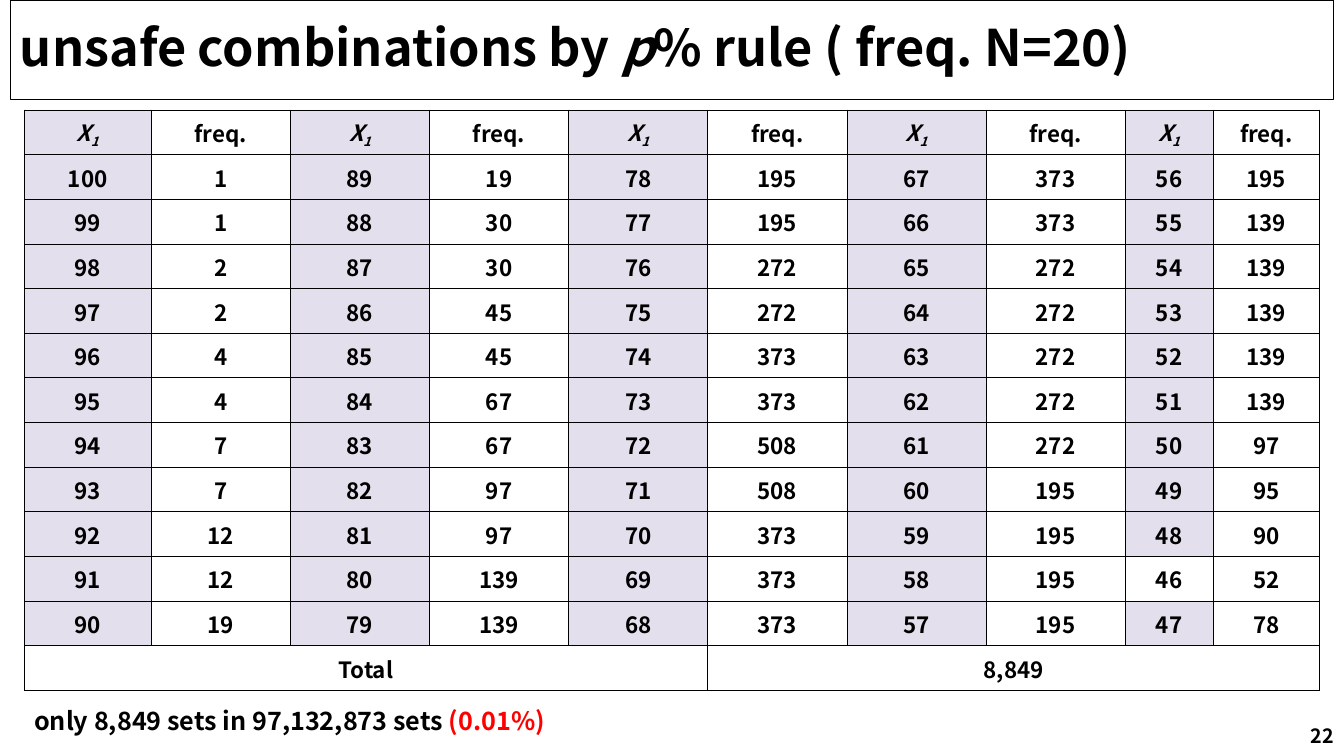
"""Build the slide listing unsafe combinations by the p% rule for N=20."""
from lxml.etree import SubElement
from pptx import Presentation
from pptx.dml.color import RGBColor
from pptx.enum.shapes import MSO_SHAPE
from pptx.enum.text import MSO_ANCHOR, PP_ALIGN
from pptx.oxml.ns import qn
from pptx.util import Inches, Pt

FONT = "Noto Sans CJK JP"
BLACK = RGBColor(0x00, 0x00, 0x00)
RED = RGBColor(0xFF, 0x00, 0x00)
WHITE = RGBColor(0xFF, 0xFF, 0xFF)
LILAC = RGBColor(0xE4, 0xDF, 0xEC)

TITLE = [("unsafe combinations by ", {}), ("p", {"italic": True}), ("% rule ( freq. N=20)", {})]
X1_HEADING = [("X", {"italic": True}), ("1", {"italic": True, "baseline": -25})]
FREQ_HEADING = [("freq.", {})]
FREQ_BY_X1 = [
    (range(100, 89, -1), [1, 1, 2, 2, 4, 4, 7, 7, 12, 12, 19]),
    (range(89, 78, -1), [19, 30, 30, 45, 45, 67, 67, 97, 97, 139, 139]),
    (range(78, 67, -1), [195, 195, 272, 272, 373, 373, 508, 508, 373, 373, 373]),
    (range(67, 56, -1), [373, 373, 272, 272, 272, 272, 272, 195, 195, 195, 195]),
    ([*range(56, 47, -1), 46, 47], [195, 139, 139, 139, 139, 139, 97, 95, 90, 52, 78]),
]
UNSHADED_X1 = 46
TOTAL = ("Total", "8,849")
SUMMARY = [("only 8,849 sets in 97,132,873 sets ", {}), ("(0.01%)", {"color": RED})]
PAGE_NUMBER = [("22", {})]

COLUMN_WIDTHS = [1.26] + [1.38] * 7 + [0.87, 1.06]
ROW_HEIGHT = 5.76 / 13


def write(frame, runs, size, align=PP_ALIGN.LEFT):
    paragraph = frame.paragraphs[0]
    paragraph.alignment = align
    for words, style in runs:
        run = paragraph.add_run()
        run.text = words
        font = run.font
        font.name, font.size, font.bold = FONT, Pt(size), True
        font.italic = style.get("italic", False)
        font.color.rgb = style.get("color", BLACK)
        properties = run._r.get_or_add_rPr()
        SubElement(properties, qn("a:ea"), typeface=FONT)
        if "baseline" in style:
            properties.set("baseline", str(style["baseline"] * 1000))
    return paragraph


def add_label(slide, box, runs, size, align=PP_ALIGN.LEFT, anchor=MSO_ANCHOR.TOP):
    frame = slide.shapes.add_textbox(*map(Inches, box)).text_frame
    frame.word_wrap = True
    frame.vertical_anchor = anchor
    write(frame, runs, size, align)


def add_title(slide):
    banner = slide.shapes.add_shape(MSO_SHAPE.RECTANGLE, *map(Inches, (0.1, 0, 13.13, 0.99)))
    banner.shadow.inherit = False
    banner.fill.background()
    banner.line.color.rgb = BLACK
    banner.line.width = Pt(0.75)
    banner.text_frame.word_wrap = True
    banner.text_frame.vertical_anchor = MSO_ANCHOR.MIDDLE
    write(banner.text_frame, TITLE, 36).line_spacing = 0.9


def format_cell(cell, fill):
    cell.vertical_anchor = MSO_ANCHOR.MIDDLE
    cell.margin_left = cell.margin_right = cell.margin_top = Inches(0.01)
    cell.margin_bottom = 0
    properties = cell._tc.get_or_add_tcPr()
    for side in ("a:lnL", "a:lnR", "a:lnT", "a:lnB"):
        border = SubElement(properties, qn(side), w=str(Pt(0.5)))
        SubElement(SubElement(border, qn("a:solidFill")), qn("a:srgbClr"), val=str(BLACK))
    cell.fill.solid()
    cell.fill.fore_color.rgb = fill


def add_frequencies(slide):
    columns = []
    for x1_values, freqs in FREQ_BY_X1:
        columns.append([X1_HEADING] + [[(str(x1), {})] for x1 in x1_values])
        columns.append([FREQ_HEADING] + [[(str(freq), {})] for freq in freqs])
    total_row = len(columns[0])
    table = slide.shapes.add_table(
        total_row + 1, len(columns), Inches(0.24), Inches(1.09),
        Inches(sum(COLUMN_WIDTHS)), Inches(ROW_HEIGHT * (total_row + 1))).table
    table.first_row = table.horz_banding = False
    for column, width in zip(table.columns, COLUMN_WIDTHS):
        column.width = Inches(width)
    for row in table.rows:
        row.height = Inches(ROW_HEIGHT)

    for c, entries in enumerate(columns):
        for r, runs in enumerate(entries):
            cell = table.cell(r, c)
            shaded = c % 2 == 0 and runs[0][0] != str(UNSHADED_X1)
            format_cell(cell, LILAC if shaded else WHITE)
            write(cell.text_frame, runs, 16, PP_ALIGN.CENTER)
        format_cell(table.cell(total_row, c), WHITE)

    span = len(columns) // len(TOTAL)
    for i, words in enumerate(TOTAL):
        cell = table.cell(total_row, i * span)
        cell.merge(table.cell(total_row, (i + 1) * span - 1))
        write(cell.text_frame, [(words, {})], 16, PP_ALIGN.CENTER)


def main():
    deck = Presentation()
    deck.slide_width, deck.slide_height = Inches(13.33), Inches(7.5)
    slide = deck.slides.add_slide(deck.slide_layouts[6])
    add_title(slide)
    add_frequencies(slide)
    add_label(slide, (0.24, 6.95, 11.23, 0.4), SUMMARY, 18)
    add_label(slide, (10.33, 7.1, 3, 0.4), PAGE_NUMBER, 14, PP_ALIGN.RIGHT, MSO_ANCHOR.MIDDLE)
    deck.save("out.pptx")


if __name__ == "__main__":
    main()
